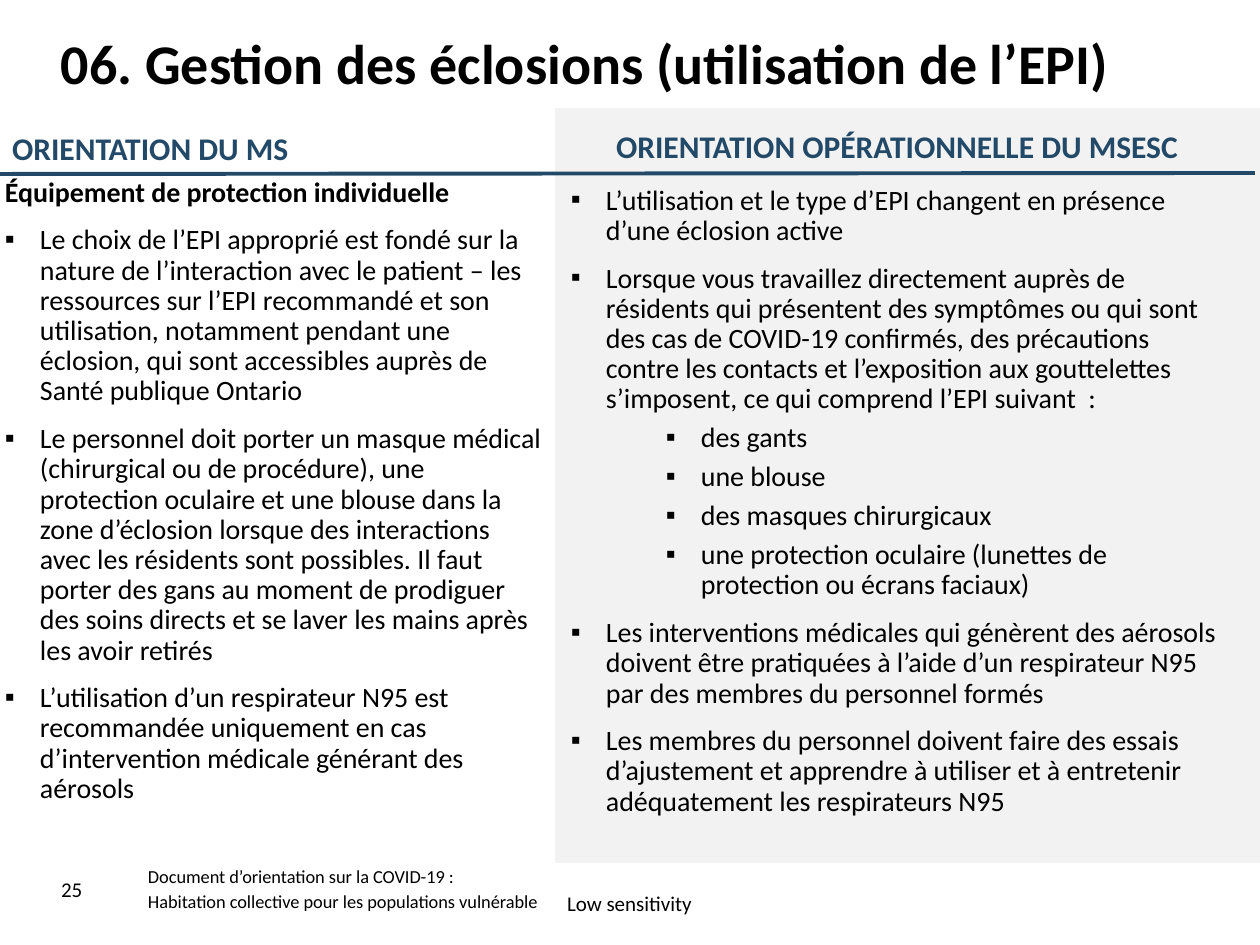
import pptx
import pptx.dml.color
import pptx.enum.shapes
import pptx.enum.text
import pptx.util
from lxml import etree
from pptx.oxml.ns import qn

RGBColor = pptx.dml.color.RGBColor
ALIGN = pptx.enum.text.PP_ALIGN
ANCHOR = pptx.enum.text.MSO_ANCHOR

BLACK = RGBColor(0x00, 0x00, 0x00)
NAVY = RGBColor(0x22, 0x4A, 0x68)
PALE_GREY = RGBColor(0xF2, 0xF2, 0xF2)

FONT = "Calibri"
PX_PER_INCH = 126
HANGING = 35
SUB_INDENT = 130

# Column text: (kind, wording)
MS_GUIDANCE = [
    ("heading", "Équipement de protection individuelle"),
    ("bullet", "Le choix de l’EPI approprié est fondé sur la nature de l’interaction avec le patient – "
               "les ressources sur l’EPI recommandé et son utilisation, notamment pendant une éclosion, "
               "qui sont accessibles auprès de Santé publique Ontario"),
    ("bullet", "Le personnel doit porter un masque médical (chirurgical ou de procédure), une protection "
               "oculaire et une blouse dans la zone d’éclosion lorsque des interactions avec les résidents "
               "sont possibles. Il faut porter des gans au moment de prodiguer des soins directs et se laver "
               "les mains après les avoir retirés"),
    ("bullet", "L’utilisation d’un respirateur N95 est recommandée uniquement en cas d’intervention "
               "médicale générant des aérosols"),
]
MSESC_GUIDANCE = [
    ("bullet", "L’utilisation et le type d’EPI changent en présence d’une éclosion active"),
    ("bullet", "Lorsque vous travaillez directement auprès de résidents qui présentent des symptômes ou "
               "qui sont des cas de COVID-19 confirmés, des précautions contre les contacts et l’exposition "
               "aux gouttelettes s’imposent, ce qui comprend l’EPI suivant  :"),
    ("sub", "des gants"),
    ("sub", "une blouse"),
    ("sub", "des masques chirurgicaux"),
    ("sub", "une protection oculaire (lunettes de protection ou écrans faciaux)"),
    ("bullet", "Les interventions médicales qui génèrent des aérosols doivent être pratiquées à l’aide "
               "d’un respirateur N95 par des membres du personnel formés"),
    ("bullet", "Les membres du personnel doivent faire des essais d’ajustement et apprendre à utiliser "
               "et à entretenir adéquatement les respirateurs N95"),
]


def px(n):
    return pptx.util.Emu(round(n * 914400 / PX_PER_INCH))


def add_box(slide, x, y, w, h, side=13, top=6, anchor=ANCHOR.TOP):
    """Add an empty wrapping text box and return its text frame."""
    tf = slide.shapes.add_textbox(px(x), px(y), px(w), px(h)).text_frame
    tf.word_wrap = True
    tf.vertical_anchor = anchor
    tf.margin_left = tf.margin_right = px(side)
    tf.margin_top = tf.margin_bottom = px(top)
    return tf


def add_paragraph(tf, text, size, bold=False, color=BLACK, align=ALIGN.LEFT, spacing=1.0, before=0):
    """Fill the first free paragraph; the first of a box gets no space before."""
    first = not tf.paragraphs[0].runs
    p = tf.paragraphs[0] if first else tf.add_paragraph()
    p.alignment = align
    p.line_spacing = spacing
    p.space_before = pptx.util.Pt(0 if first else before)
    r = p.add_run()
    r.text = text
    r.font.name = FONT
    r.font.size = pptx.util.Pt(size)
    r.font.bold = bold
    r.font.color.rgb = color
    return p


def add_bullet(p, left):
    pPr = p._p.get_or_add_pPr()
    pPr.set("marL", str(px(left)))
    pPr.set("indent", str(-px(HANGING)))
    etree.SubElement(pPr, qn("a:buFont"), typeface="Arial")
    etree.SubElement(pPr, qn("a:buChar"), char="▪")


def add_column(slide, x, y, w, h, side, items):
    tf = add_box(slide, x, y, w, h, side, top=5)
    for kind, text in items:
        p = add_paragraph(tf, text, 16, bold=kind == "heading", spacing=0.9,
                          before=5 if kind == "sub" else 10)
        if kind == "sub":
            p.level = 1
        if kind != "heading":
            add_bullet(p, SUB_INDENT if kind == "sub" else HANGING)


def add_panel(slide, x, y, w, h):
    sp = slide.shapes.add_shape(pptx.enum.shapes.MSO_SHAPE.RECTANGLE, px(x), px(y), px(w), px(h))
    sp.shadow.inherit = False
    sp.fill.solid()
    sp.fill.fore_color.rgb = PALE_GREY
    sp.line.color.rgb = PALE_GREY
    sp.line.width = pptx.util.Pt(1)


def add_rule(slide, x1, y1, x2, y2):
    line = slide.shapes.add_connector(pptx.enum.shapes.MSO_CONNECTOR.STRAIGHT,
                                      px(x1), px(y1), px(x2), px(y2))
    line.line.color.rgb = NAVY
    line.line.width = pptx.util.Pt(2.25)
    etree.SubElement(line._element.spPr, qn("a:effectLst"))


def main():
    prs = pptx.Presentation()
    prs.slide_width, prs.slide_height = px(1260), px(945)
    s = prs.slides.add_slide(prs.slide_layouts[6])

    # Right column background
    add_panel(s, 556, 109, 709, 753)

    # Footer
    tf = add_box(s, 456, 878, 347, 50, anchor=ANCHOR.MIDDLE)
    add_paragraph(tf, "Low sensitivity", 12, align=ALIGN.CENTER)
    tf = add_box(s, 48, 864, 71, 50, anchor=ANCHOR.MIDDLE)
    add_paragraph(tf, "25", 12)
    tf = add_box(s, 135, 864, 462, 50, anchor=ANCHOR.MIDDLE)
    add_paragraph(tf, "Document d’orientation sur la COVID-19 :", 10.5)
    add_paragraph(tf, "Habitation collective pour les populations vulnérable", 10.5, before=1.5)

    # Title
    tf = add_box(s, 48, 30, 1207, 107)
    add_paragraph(tf, "06. Gestion des éclosions (utilisation de l’EPI)", 32, bold=True, spacing=0.9)

    # Column text
    add_column(s, 0, 173, 552, 693, 5, MS_GUIDANCE)
    add_column(s, 562, 181, 667, 693, 9, MSESC_GUIDANCE)

    # Column headings and the rule below them
    add_rule(s, 0, 174, 1255, 173)
    for text, x, y, w in (("ORIENTATION DU MS", -1, 123, 513),
                          ("ORIENTATION OPÉRATIONNELLE DU MSESC", 603, 121, 625)):
        add_paragraph(add_box(s, x, y, w, 50), text, 18, bold=True, color=NAVY)

    prs.save("out.pptx")


if __name__ == "__main__":
    main()
